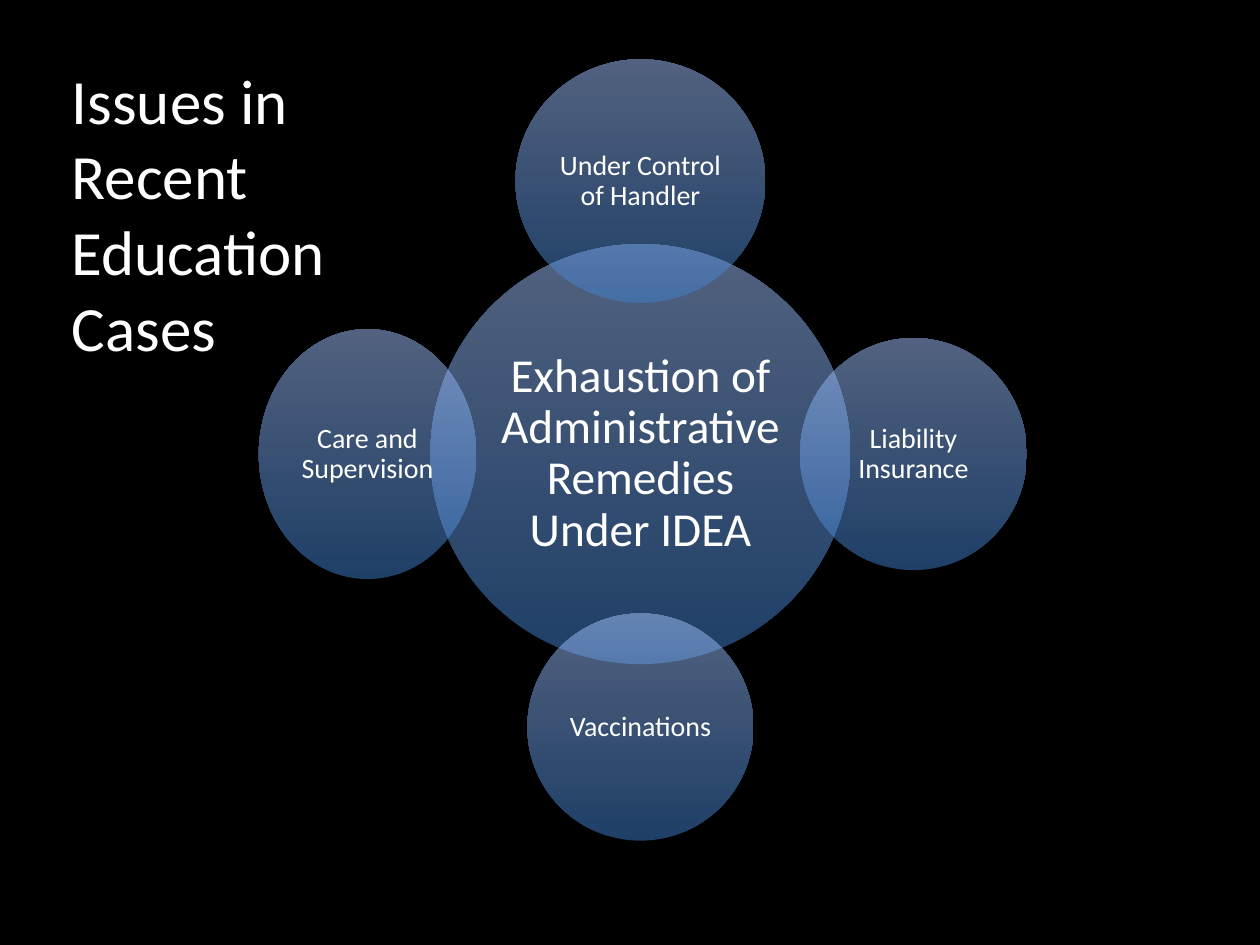
from dataclasses import dataclass

from lxml import etree
from pptx import Presentation
from pptx.dml.color import RGBColor
from pptx.enum.shapes import MSO_SHAPE
from pptx.enum.text import MSO_ANCHOR, MSO_AUTO_SIZE, PP_ALIGN
from pptx.oxml.ns import qn
from pptx.slide import Slide
from pptx.text.text import _Paragraph
from pptx.util import Pt

ELLIPSE = MSO_SHAPE.OVAL
MIDDLE = MSO_ANCHOR.MIDDLE
CENTER = PP_ALIGN.CENTER
FIT_SHAPE = MSO_AUTO_SIZE.SHAPE_TO_FIT_TEXT
NO_AUTOFIT = MSO_AUTO_SIZE.NONE


@dataclass(frozen=True)
class Theme:
    font: str = "Calibri"
    background: RGBColor = RGBColor(0x00, 0x00, 0x00)
    text: RGBColor = RGBColor(0xFF, 0xFF, 0xFF)
    circle_bottom: RGBColor = RGBColor(0x3F, 0x7F, 0xCE)
    circle_top: RGBColor = RGBColor(0xA4, 0xC4, 0xFF)
    circle_opacity: int = 50
    title_size: float = 36
    core_size: float = 27
    issue_size: float = 16


@dataclass(frozen=True)
class Issue:
    """A circle; direction is its unit step away from the core."""
    label: str
    direction: tuple[int, int]
    width: float
    height: float
    text_size: float
    inset: float = 1.5


THEME = Theme()
SLIDE_WIDTH, SLIDE_HEIGHT = 720, 540
CORE_X, CORE_Y = 366, 259.5
ORBIT = 156

TITLE_LINES = ("Issues in Recent Education", "Cases")
ISSUES = (
    Issue("Exhaustion of Administrative Remedies Under IDEA",
          (0, 0), 240, 240, THEME.core_size, 3),
    Issue("Under Control of Handler", (0, -1), 142.8, 139.2, THEME.issue_size),
    Issue("Liability Insurance", (1, 0), 129.6, 132.6, THEME.issue_size),
    Issue("Vaccinations", (0, 1), 129.2, 129.8, THEME.issue_size),
    Issue("Care and Supervision", (-1, 0), 124.2, 142.8, THEME.issue_size),
)


def add_text(paragraph: _Paragraph, text: str, size: float) -> None:
    run = paragraph.add_run()
    run.text = text
    run.font.name = THEME.font
    run.font.size = Pt(size)
    run.font.color.rgb = THEME.text


def add_issue(slide: Slide, issue: Issue) -> None:
    step_x, step_y = issue.direction
    left = CORE_X + step_x * ORBIT - issue.width / 2
    top = CORE_Y + step_y * ORBIT - issue.height / 2
    circle = slide.shapes.add_shape(
        ELLIPSE, Pt(left), Pt(top), Pt(issue.width), Pt(issue.height))
    circle.shadow.inherit = False
    circle.line.fill.background()

    # Translucent gradient, rising from bottom to top
    circle.fill.gradient()
    circle.fill.gradient_angle = 90
    stop_colors = (THEME.circle_bottom, THEME.circle_top)
    for stop, color in zip(circle.fill.gradient_stops, stop_colors):
        stop.color.rgb = color
    for color_element in circle.fill._xPr.iter(qn("a:srgbClr")):
        alpha = etree.SubElement(color_element, qn("a:alpha"))
        alpha.set("val", str(THEME.circle_opacity * 1000))

    # Label
    frame = circle.text_frame
    frame.word_wrap = True
    frame.auto_size = NO_AUTOFIT
    frame.vertical_anchor = MIDDLE
    frame.margin_left = frame.margin_right = Pt(issue.inset)
    frame.margin_top = frame.margin_bottom = Pt(issue.inset)
    paragraph = frame.paragraphs[0]
    paragraph.alignment = CENTER
    paragraph.line_spacing = 0.9
    add_text(paragraph, issue.label, issue.text_size)


def add_title(slide: Slide) -> None:
    title = slide.shapes.add_textbox(Pt(34), Pt(31.5), Pt(226.8), Pt(181.5))
    frame = title.text_frame
    frame.word_wrap = True
    frame.auto_size = FIT_SHAPE
    for index, line in enumerate(TITLE_LINES):
        paragraph = frame.add_paragraph() if index else frame.paragraphs[0]
        add_text(paragraph, line, THEME.title_size)


def main() -> None:
    presentation = Presentation()
    presentation.slide_width = Pt(SLIDE_WIDTH)
    presentation.slide_height = Pt(SLIDE_HEIGHT)
    slide = presentation.slides.add_slide(presentation.slide_layouts[6])

    # Background
    slide.background.fill.solid()
    slide.background.fill.fore_color.rgb = THEME.background

    # Core circle with its four satellites, then the title
    for issue in ISSUES:
        add_issue(slide, issue)
    add_title(slide)

    presentation.save("out.pptx")


if __name__ == "__main__":
    main()
